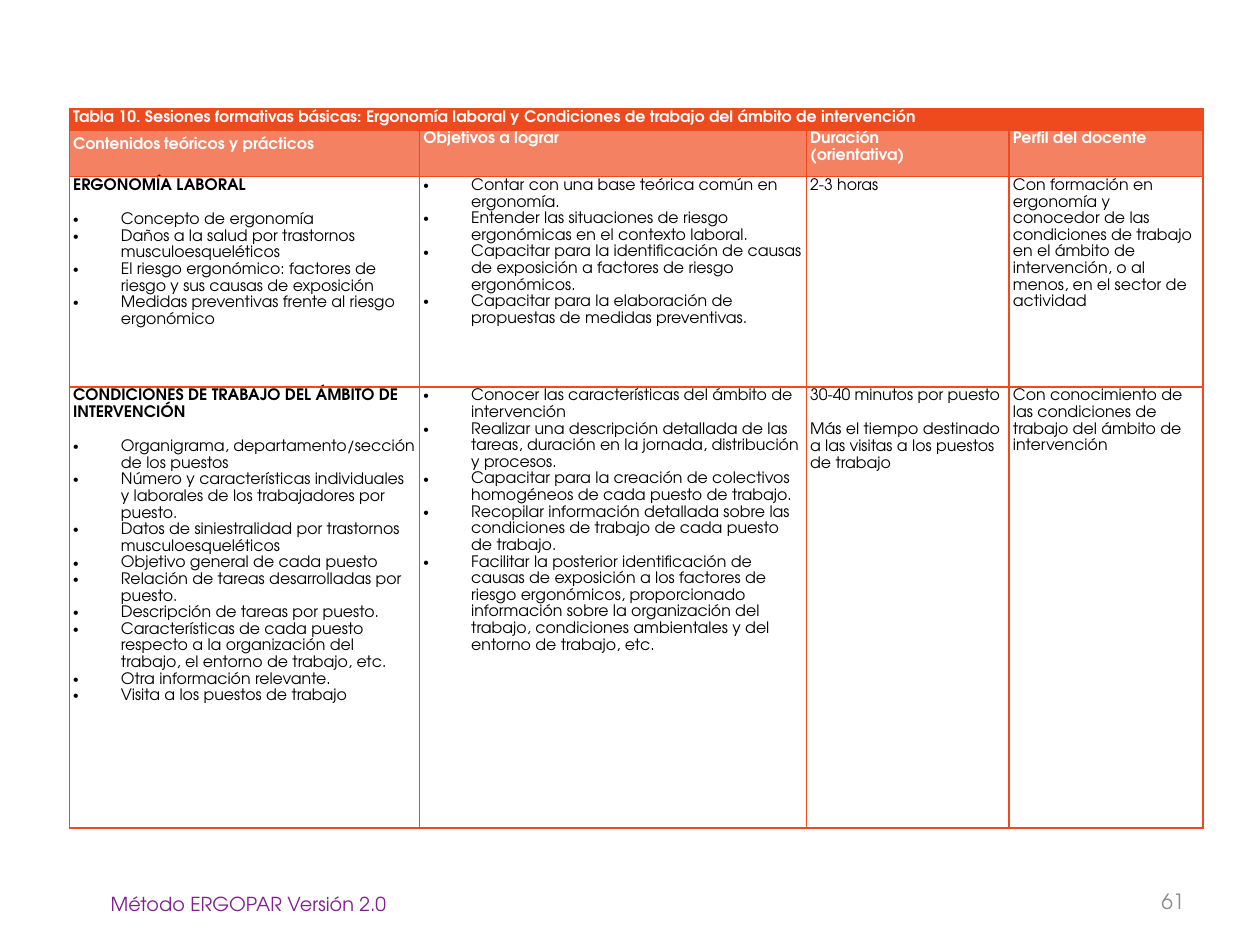
from copy import deepcopy

from lxml import etree
from pptx import Presentation
from pptx.dml.color import RGBColor
from pptx.enum.text import MSO_ANCHOR as Anchor, PP_ALIGN as Align
from pptx.oxml import parse_xml
from pptx.oxml.ns import nsdecls, qn
from pptx.util import Inches, Pt

COLORS = {"orange": "EF4A1D", "salmon": "F48162", "white": "FFFFFF",
          "black": "000000", "gray": "8C8C8C", "purple": "811F91"}
FONT = "TeX Gyre Adventor"
COLUMNS = [2.78, 3.07, 1.61, 1.54]
ROWS = [0.17, 0.37, 1.67, 3.5]
TITLE = ("Tabla 10. Sesiones formativas básicas: Ergonomía laboral y "
         "Condiciones de trabajo del ámbito de intervención")
CELLS = [
    [[TITLE], [], [], []],
    [["Contenidos| |teóricos y prácticos"], ["Objetivos a lograr"],
     ["Duración \v(orientativa)"], ["Perfil del docente"]],
    [["ERGONOMÍA LABORAL",
      "•Concepto de ergonomía",
      "•Daños a la salud por trastornos musculoesqueléticos",
      "•El riesgo ergonómico: factores de riesgo y sus causas de exposición",
      "•Medidas preventivas frente al riesgo ergonómico"],
     ["•Contar con una base teórica común en ergonomía.",
      "•Entender las situaciones de riesgo ergonómicas en el contexto laboral.",
      "•Capacitar para la identificación de causas de exposición a factores de riesgo ergonómicos.",
      "•Capacitar para la elaboración de propuestas de medidas preventivas."],
     ["2-3 horas"],
     ["Con formación en ergonomía y conocedor de las condiciones de trabajo en el ámbito de "
      "intervención, o al menos, en el sector de actividad"]],
    [["CONDICIONES DE TRABAJO DEL ÁMBITO DE INTERVENCIÓN",
      "•Organigrama, departamento/sección de los puestos",
      "•Número y características individuales y laborales de los trabajadores por puesto.",
      "•Datos de siniestralidad por trastornos musculoesqueléticos",
      "•Objetivo general de cada puesto",
      "•Relación de tareas desarrolladas por puesto.",
      "•Descripción de tareas por puesto.",
      "•Características de cada puesto respecto a la organización del trabajo, "
      "el entorno de trabajo, etc.",
      "•Otra información relevante.",
      "•Visita a los puestos de trabajo"],
     ["•Conocer las características del ámbito de intervención",
      "•Realizar una descripción detallada de las tareas, duración en la jornada, "
      "distribución y procesos.",
      "•Capacitar para la creación de colectivos homogéneos de cada puesto de trabajo.",
      "•Recopilar información detallada sobre las condiciones de trabajo de cada puesto de trabajo.",
      "•Facilitar la posterior identificación de causas de exposición a los factores de riesgo "
      "ergonómicos, proporcionado información sobre la organización del trabajo, condiciones "
      "ambientales y del entorno de trabajo, etc."],
     ["30-40 minutos por puesto",
      "Más el tiempo destinado a las visitas a los puestos de trabajo"],
     ["Con conocimiento de las condiciones de trabajo del ámbito de intervención"]],
]


def style(span, size, color, bold=False, name=FONT):
    values = {"size": Pt(size), "bold": bold, "name": name}
    for key, value in values.items():
        setattr(span.font, key, value)
    span.font.color.rgb = RGBColor.from_string(COLORS[color])


def fill_paragraph(para, text, header, gap):
    para.line_spacing = 1.15
    para.space_before = Pt(10 if gap else 0)
    if text.startswith("•"):
        props = para._p.get_or_add_pPr()
        props.set("marL", str(Inches(0.38)))
        props.set("indent", str(-Inches(0.38)))
        etree.SubElement(props, qn("a:buFont")).set("typeface", "Arial")
        etree.SubElement(props, qn("a:buChar")).set("char", "•")
        text = text[1:]
    if "|" in text:
        for part in text.split("|"):
            para.add_run().text = part
    else:
        para.text = text
    for span in para.runs:
        blank = span.text == " "
        style(span, 10 if blank else 9, "white" if header else "black",
              header or text.isupper(), "Calibri" if blank else FONT)
    for line_break in para._p.findall(qn("a:br")):
        line_break.append(deepcopy(para.runs[0]._r.rPr))


deck = Presentation()
deck.slide_width, deck.slide_height = Inches(10), Inches(7.5)
page = deck.slides.add_slide(deck.slide_layouts[6])

number = page.shapes.add_textbox(Inches(7.17), Inches(6.95), Inches(2.33), Inches(0.4))
number.text_frame.word_wrap = True
number.text_frame.vertical_anchor = Anchor.MIDDLE
para = number.text_frame.paragraphs[0]
para.alignment = Align.RIGHT
para.text = "61"
style(para.runs[0], 12, "gray")

table = page.shapes.add_table(len(ROWS), len(COLUMNS), Inches(0.55), Inches(0.86),
                              Inches(sum(COLUMNS)), Inches(sum(ROWS))).table
table.first_row = table.horz_banding = False
for column, width in zip(table.columns, COLUMNS):
    column.width = Inches(width)
for row, height in zip(table.rows, ROWS):
    row.height = Inches(height)
table.cell(0, 0).merge(table.cell(0, 3))

margins = {"margin_left": Inches(0.03), "margin_right": Inches(0.03),
           "margin_top": 0, "margin_bottom": 0}
row_fills = ["orange", "salmon", None, None]
for r, row_texts in enumerate(CELLS):
    for c, texts in enumerate(row_texts):
        cell = table.cell(r, c)
        for key, value in margins.items():
            setattr(cell, key, value)
        if row_fills[r]:
            cell.fill.solid()
            cell.fill.fore_color.rgb = RGBColor.from_string(COLORS[row_fills[r]])
        else:
            cell.fill.background()
        for i, side in enumerate(["lnL", "lnR", "lnT", "lnB"]):
            cell._tc.get_or_add_tcPr().insert(i, parse_xml(
                f'<a:{side} {nsdecls("a")} w="{Pt(1)}"><a:solidFill>'
                f'<a:srgbClr val="{COLORS["orange"]}"/></a:solidFill></a:{side}>'))
        frame = cell.text_frame
        for i, text in enumerate(texts):
            para = frame.add_paragraph() if i else frame.paragraphs[0]
            after_heading = i == 1 and texts[0].isupper()
            fill_paragraph(para, text, r < 2, not text.startswith("•") or after_heading)

footer = page.shapes.add_textbox(Inches(0.78), Inches(7.03), Inches(5.47), Inches(0.29))
footer.text_frame.word_wrap = True
para = footer.text_frame.paragraphs[0]
para.text = "Método ERGOPAR Versión 2.0"
style(para.runs[0], 11, "purple")

deck.save("out.pptx")
